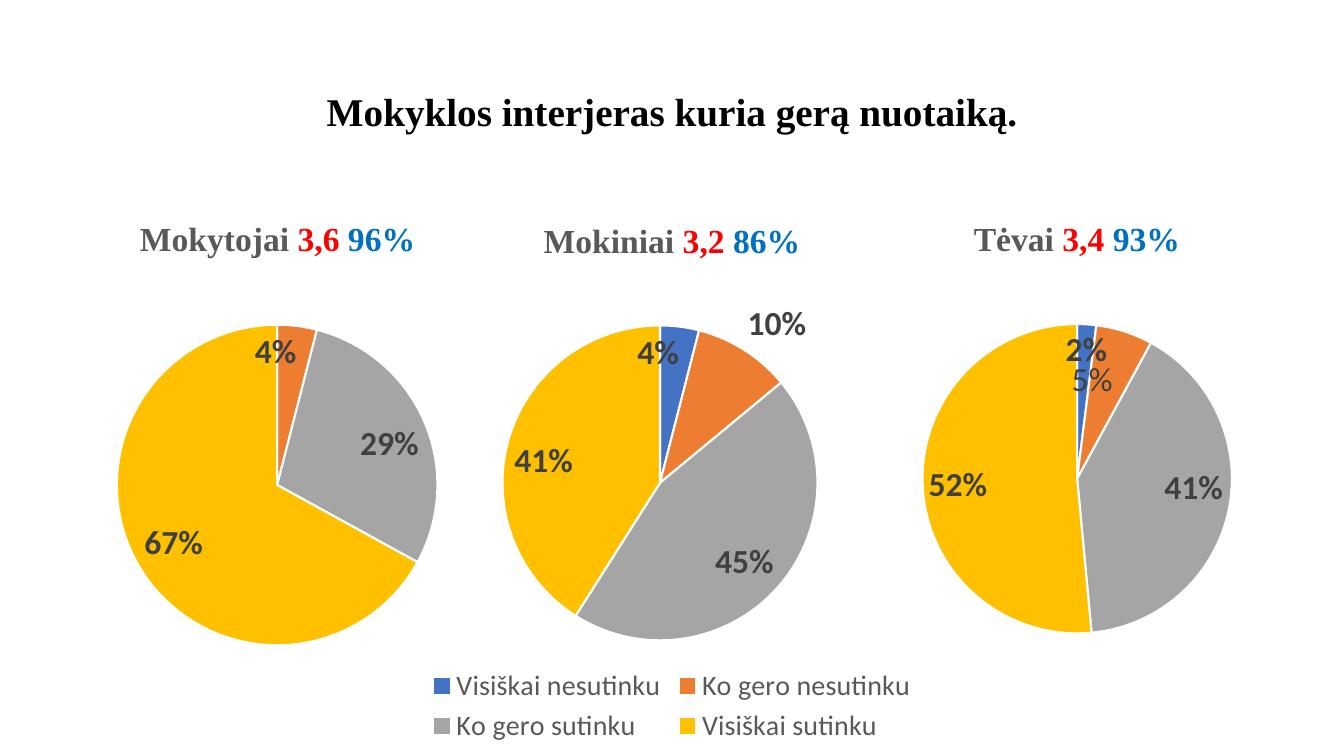
from dataclasses import dataclass

from pptx import Presentation
from pptx.chart.data import CategoryChartData
from pptx.dml.color import RGBColor
from pptx.enum.chart import XL_CHART_TYPE, XL_LABEL_POSITION, XL_LEGEND_POSITION
from pptx.enum.text import MSO_ANCHOR, PP_ALIGN
from pptx.oxml import parse_xml
from pptx.oxml.ns import nsdecls, qn
from pptx.util import Pt

PIE = XL_CHART_TYPE.PIE
INNER = XL_LABEL_POSITION.INSIDE_END
OUTER = XL_LABEL_POSITION.OUTSIDE_END
BOTTOM = XL_LEGEND_POSITION.BOTTOM
CENTER = PP_ALIGN.CENTER
MIDDLE = MSO_ANCHOR.MIDDLE


@dataclass(frozen=True)
class Theme:
    serif: str = "Times New Roman"
    sans: str = "Calibri"
    black: str = "000000"
    white: str = "FFFFFF"
    gray: str = "595959"
    dark: str = "404040"
    red: str = "FF0000"
    blue: str = "0070C0"
    slices: tuple = ("4472C4", "ED7D31", "A5A5A5", "FFC000")
    head: int = 28
    large: int = 24
    key: int = 20
    base: int = 10


THEME = Theme()
ANSWERS = ["Visiškai nesutinku", "Ko gero nesutinku",
           "Ko gero sutinku", "Visiškai sutinku"]
NUMBERS = ["1", "2", "3", "4"]


def style(font, size, color, face=THEME.sans, bold=False):
    font.name, font.size, font.bold = face, Pt(size), bold
    font.color.rgb = RGBColor.from_string(color)


def write(para, text, **fmt):
    """Add one formatted run to a paragraph."""
    run = para.add_run()
    run.text = text
    style(run.font, **fmt)


def add_head(slide, text, box):
    frame = slide.shapes.add_textbox(*map(Pt, box)).text_frame
    frame.word_wrap, frame.vertical_anchor = True, MIDDLE
    para = frame.paragraphs[0]
    para.alignment, para.line_spacing = CENTER, 0.9
    write(para, text, size=THEME.head, color=THEME.black,
          face=THEME.serif, bold=True)


def layout(inner="", **places):
    """Build a manual layout from fractions of the chart."""
    tags = "".join(f'<c:{k} val="{v:.4f}"/>' for k, v in places.items())
    return parse_xml(f'<c:layout {nsdecls("c")}><c:manualLayout>'
                     f'{inner}{tags}</c:manualLayout></c:layout>')


def place_pie(chart, box, mid, size):
    """Fix the pie by its centre on the slide and its diameter."""
    left, top, wide, high = box
    area = chart.plots[0]._element.getparent()
    old = area.find(qn("c:layout"))
    if old is not None:
        area.remove(old)
    inner = ('<c:layoutTarget val="inner"/><c:xMode val="edge"/>'
             '<c:yMode val="edge"/>')
    area.insert(0, layout(inner, x=(mid[0] - size / 2 - left) / wide,
                          y=(mid[1] - size / 2 - top) / high,
                          w=size / wide, h=size / high))


def add_pie(slide, box, mid, size, title, values, names=NUMBERS):
    data = CategoryChartData(number_format="0%")
    data.categories = names
    data.add_series("Series 1", values)
    chart = slide.shapes.add_chart(PIE, *map(Pt, box), data).chart
    style(chart.font, THEME.base, THEME.black)
    chart.has_legend = False
    place_pie(chart, box, mid, size)

    # Title: group, mean score, share of agreement
    chart.has_title = True
    para = chart.chart_title.text_frame.paragraphs[0]
    for text, color in zip(title, (THEME.gray, THEME.red, THEME.blue)):
        write(para, text, size=THEME.large, color=color,
              face=THEME.serif, bold=True)

    # Slices
    plot = chart.plots[0]
    plot.vary_by_categories = True
    series = plot.series[0]
    for i, color in enumerate(THEME.slices):
        form = series.points[i].format
        form.fill.solid()
        form.fill.fore_color.rgb = RGBColor.from_string(color)
        form.line.width = Pt(1.5)
        form.line.color.rgb = RGBColor.from_string(THEME.white)

    # Value labels
    labels = series.data_labels
    labels.show_value, labels.position = True, INNER
    labels.show_percentage = False
    labels.number_format, labels.number_format_is_linked = "0%", False
    style(labels.font, THEME.large, THEME.dark, bold=True)
    return chart


def hide_label(chart, i):
    labels = chart.plots[0].series[0].data_labels._element
    labels.insert(0, parse_xml(f'<c:dLbl {nsdecls("c")}><c:idx val="{i}"/>'
                               '<c:delete val="1"/></c:dLbl>'))


def add_key(chart):
    chart.has_legend = True
    key = chart.legend
    key.position, key.include_in_layout = BOTTOM, False
    style(key.font, THEME.key, THEME.gray)


def main():
    deck = Presentation()
    deck.slide_width, deck.slide_height = Pt(960), Pt(540)
    slide = deck.slides.add_slide(deck.slide_layouts[6])
    add_head(slide, "Mokyklos interjeras kuria gerą nuotaiką.",
             (66, 29, 828, 104))

    # Teachers: the empty slice has no label
    staff = add_pie(slide, (6, 144, 384.5, 327.5), (198, 346.5), 229,
                    ("Mokytojai ", "3,6 ", "96%"), (0, 0.04, 0.29, 0.67))
    hide_label(staff, 0)

    # Pupils: carries the shared legend
    pupils = add_pie(slide, (160, 144, 640, 391), (471.5, 345), 225,
                     ("Mokiniai ", "3,2 ", "86%"),
                     (0.04, 0.1, 0.45, 0.41), ANSWERS)
    add_key(pupils)
    label = pupils.plots[0].series[0].points[1].data_label
    style(label.font, THEME.large, THEME.dark, bold=True)
    label.position = OUTER

    # Parents: one label is typed in and shifted
    parents = add_pie(slide, (589.5, 144, 359.5, 319.5), (769.5, 342), 221,
                      ("Tėvai ", "3,4 ", "93%"), (0.02, 0.06, 0.41, 0.52))
    label = parents.plots[0].series[0].points[1].data_label
    write(label.text_frame.paragraphs[0], "5%",
          size=THEME.large, color=THEME.dark)
    label.position = INNER
    label._get_or_add_dLbl().insert(1, layout(x=-0.02, y=0.05))

    deck.save("out.pptx")


if __name__ == "__main__":
    main()
